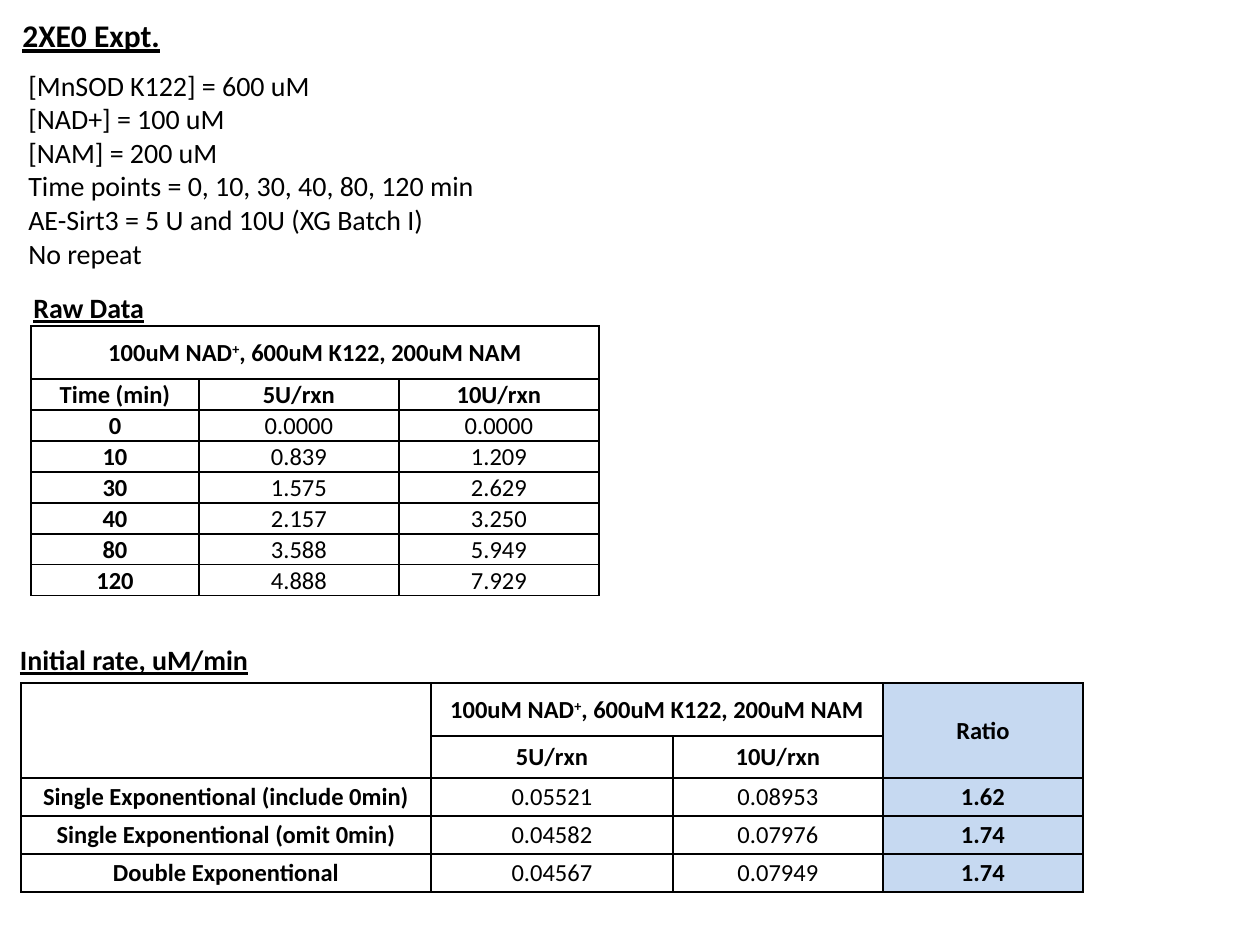
from lxml.etree import SubElement
from pptx import Presentation
from pptx.dml.color import RGBColor
from pptx.enum.text import MSO_ANCHOR, MSO_AUTO_SIZE, PP_ALIGN
from pptx.oxml.ns import qn
from pptx.util import Emu, Pt

BLACK, BLUE = "000000", "C6D9F1"
MIX = ("100uM NAD", "+", ", 600uM K122, 200uM NAM")

HEADINGS = [
    ("2XE0 Expt.", 18, (10, 10, 164, 50), PP_ALIGN.LEFT),
    ("Raw Data", 16, (21, 284, 137, 47), PP_ALIGN.LEFT),
    ("Initial rate, uM/min", 16, (6, 636, 256, 47), PP_ALIGN.CENTER),
]
CONDITIONS = [
    "[MnSOD K122] = 600 uM",
    "[NAD+] = 100 uM",
    "[NAM] = 200 uM",
    "Time points = 0, 10, 30, 40, 80, 120 min",
    "AE-Sirt3 = 5 U and 10U (XG Batch I)",
    "No repeat",
]
RAW_DATA = {
    "at": (31, 326),
    "cols": [168, 200, 200],
    "rows": [53] + [31] * 7,
    "merges": [(0, 0, 0, 2)],
    "cells": [
        [MIX, None, None],
        ["Time (min)", "5U/rxn", "10U/rxn"],
        ["0", "0.0000", "0.0000"],
        ["10", "0.839", "1.209"],
        ["30", "1.575", "2.629"],
        ["40", "2.157", "3.250"],
        ["80", "3.588", "5.949"],
        ["120", "4.888", "7.929"],
    ],
    "ratio_col": None,
}
RATES = {
    "at": (21, 683),
    "cols": [410, 242, 210, 200],
    "rows": [53, 42] + [38] * 3,
    "merges": [(0, 0, 1, 0), (0, 1, 0, 2), (0, 3, 1, 3)],
    "cells": [
        [None, MIX, None, "Ratio"],
        [None, "5U/rxn", "10U/rxn", None],
        ["Single Exponentional (include 0min)", "0.05521", "0.08953", "1.62"],
        ["Single Exponentional (omit 0min)", "0.04582", "0.07976", "1.74"],
        ["Double Exponentional", "0.04567", "0.07949", "1.74"],
    ],
    "ratio_col": 3,
}


def px(n):
    return Emu(round(n * 914400 / 126))


def rgb(value):
    return RGBColor.from_string(value)


def add_run(p, text, size, bold=False, underline=False):
    r = p.add_run()
    r.text = text
    r.font.name = "Calibri"
    r.font.size = Pt(size)
    r.font.bold = bold
    r.font.underline = underline
    r.font.color.rgb = rgb(BLACK)
    return r


def add_text(s, lines, size, box, align=PP_ALIGN.LEFT, heading=False):
    tf = s.shapes.add_textbox(*map(px, box)).text_frame
    tf.word_wrap = False
    tf.auto_size = MSO_AUTO_SIZE.SHAPE_TO_FIT_TEXT
    for i, line in enumerate(lines):
        p = tf.add_paragraph() if i else tf.paragraphs[0]
        p.alignment = align
        add_run(p, line, size, heading, heading)


def style_cell(cell, fill):
    cell.margin_left = cell.margin_top = cell.margin_right = px(1)
    cell.margin_bottom = 0
    cell.vertical_anchor = MSO_ANCHOR.MIDDLE
    tcPr = cell._tc.get_or_add_tcPr()
    for side in ("lnL", "lnR", "lnT", "lnB"):
        ln = SubElement(tcPr, qn(f"a:{side}"), w=str(Pt(1)))
        SubElement(SubElement(ln, qn("a:solidFill")), qn("a:srgbClr"), val=BLACK)
    if fill:
        cell.fill.solid()
        cell.fill.fore_color.rgb = rgb(fill)
    else:
        cell.fill.background()


def fill_cell(cell, content, bold):
    p = cell.text_frame.paragraphs[0]
    p.alignment = PP_ALIGN.CENTER
    parts = (content,) if isinstance(content, str) else content
    for i, part in enumerate(parts):
        r = add_run(p, part, 14, bold)
        if i % 2:
            r._r.get_or_add_rPr().set("baseline", "30000")


def add_data_table(s, data):
    cols, rows, ratio_col = data["cols"], data["rows"], data["ratio_col"]
    box = (*data["at"], sum(cols), sum(rows))
    table = s.shapes.add_table(len(rows), len(cols), *map(px, box)).table
    table.first_row = table.horz_banding = False
    for col, width in zip(table.columns, cols):
        col.width = px(width)
    for row, height in zip(table.rows, rows):
        row.height = px(height)
    for top, left, bottom, right in data["merges"]:
        table.cell(top, left).merge(table.cell(bottom, right))
    for i, line in enumerate(data["cells"]):
        for j, content in enumerate(line):
            cell = table.cell(i, j)
            style_cell(cell, BLUE if j == ratio_col else None)
            if content:
                fill_cell(cell, content, i < 2 or j in (0, ratio_col))


def main():
    """Build the experiment slide with its conditions and two result tables."""
    prs = Presentation()
    prs.slide_width, prs.slide_height = px(1260), px(945)
    s = prs.slides.add_slide(prs.slide_layouts[6])
    for data in (RAW_DATA, RATES):
        add_data_table(s, data)
    for text, size, box, align in HEADINGS:
        add_text(s, [text], size, box, align, heading=True)
    add_text(s, CONDITIONS, 16, (16, 62, 476, 217))
    prs.save("out.pptx")


if __name__ == "__main__":
    main()
